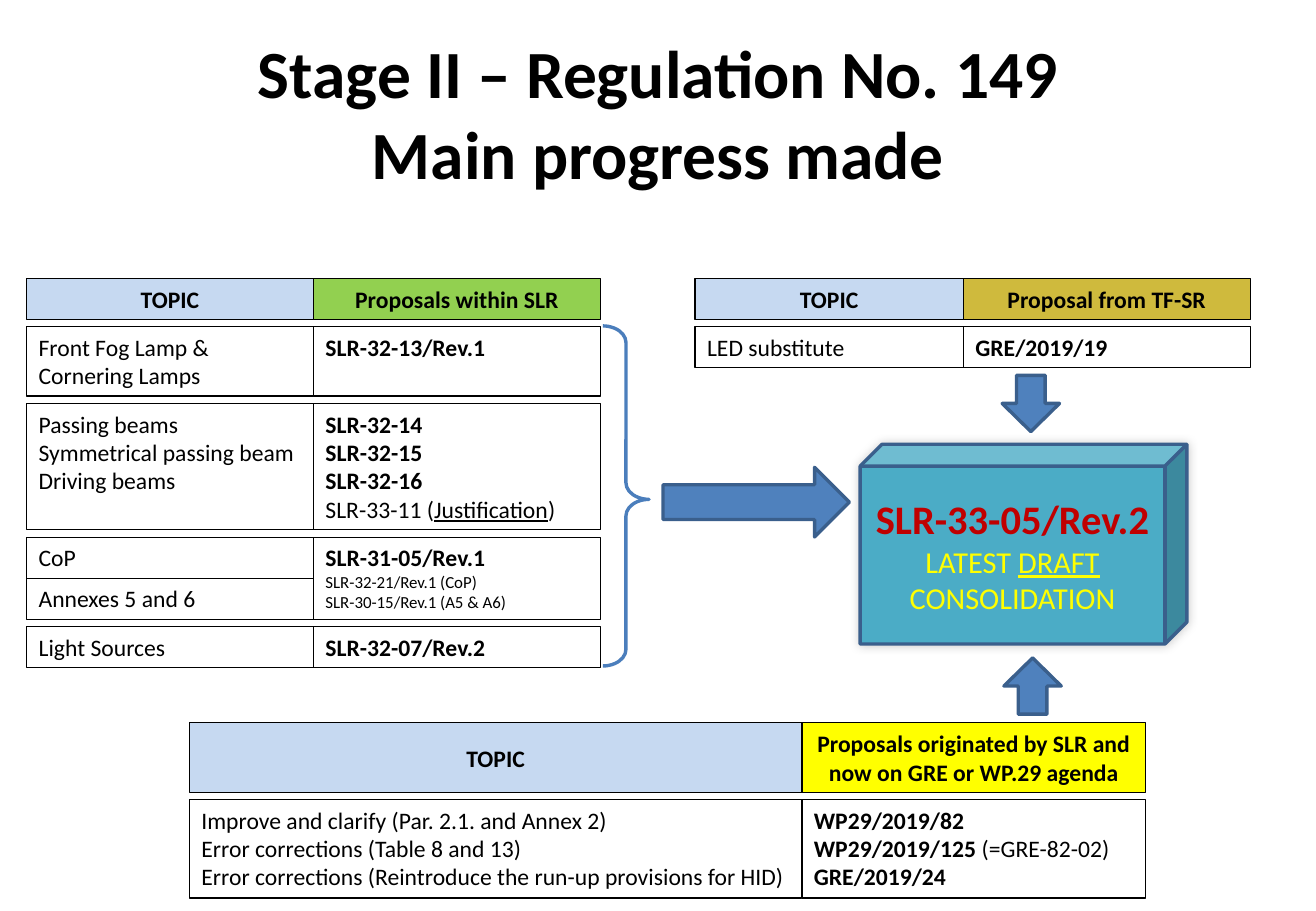
"""Build the slide on the main progress of Regulation No. 149, Stage II."""
from dataclasses import dataclass

from lxml import etree
from pptx import Presentation
from pptx.dml.color import RGBColor
from pptx.enum import shapes, text
from pptx.oxml import ns
from pptx.util import Pt

FONT = "Calibri"
BLACK = RGBColor(0x00, 0x00, 0x00)
PALE_BLUE = RGBColor(0xC6, 0xD9, 0xF1)
GREEN = RGBColor(0x92, 0xD0, 0x50)
GOLD = RGBColor(0xCF, 0xBA, 0x3D)
YELLOW = RGBColor(0xFF, 0xFF, 0x00)
TEAL = RGBColor(0x4B, 0xAC, 0xC6)
BLUE = RGBColor(0x4F, 0x81, 0xBD)
DARK_BLUE = RGBColor(0x3A, 0x5F, 0x8C)
BRACE_BLUE = RGBColor(0x4B, 0x7E, 0xBC)
RED = RGBColor(0xC0, 0x00, 0x00)

ROW_GAP = 4.4
LINE_1, LINES_2, LINES_3, LINES_4 = 24.3, 41.1, 58.3, 74.9
SHAPE = shapes.MSO_SHAPE
TOP, MIDDLE = text.MSO_ANCHOR.TOP, text.MSO_ANCHOR.MIDDLE
LEFT, CENTER = text.PP_ALIGN.LEFT, text.PP_ALIGN.CENTER


@dataclass
class Span:
    words: str
    size: float = 14
    bold: bool = False
    underline: bool = False
    color: RGBColor = BLACK


def plain(*lines):
    return [[Span(line)] for line in lines]


def bold(*lines):
    return [[Span(line, bold=True)] for line in lines]


def write(shape, paragraphs, align=LEFT, anchor=TOP):
    frame = shape.text_frame
    frame.word_wrap = True
    frame.vertical_anchor = anchor
    for index, spans in enumerate(paragraphs):
        para = frame.add_paragraph() if index else frame.paragraphs[0]
        para.alignment = align
        for span in spans:
            run = para.add_run()
            run.text = span.words
            run.font.name = FONT
            run.font.size = Pt(span.size)
            run.font.bold = span.bold
            run.font.underline = span.underline
            run.font.color.rgb = span.color


def add_box(page, kind, box, fill=None, line=BLACK, weight=0.75):
    shape = page.shapes.add_shape(kind, *map(Pt, box))
    shape.shadow.inherit = False
    if fill is None:
        shape.fill.background()
    else:
        shape.fill.solid()
        shape.fill.fore_color.rgb = fill
    shape.line.color.rgb = line
    shape.line.width = Pt(weight)
    return shape


def add_title(page, box):
    title = page.shapes.add_textbox(*map(Pt, box))
    lines = ("Stage II – Regulation No. 149", "Main progress made")
    write(title, [[Span(line, 40, True)] for line in lines], CENTER)


def add_topic_grid(page, left, top, widths, header, rows):
    """Stack a header and rows of (height, topic cells, proposal)."""
    heading, color, height = header
    for x, width, label, fill in (
        (left, widths[0], "TOPIC", PALE_BLUE),
        (left + widths[0], widths[1], heading, color),
    ):
        cell = add_box(page, SHAPE.RECTANGLE, (x, top, width, height), fill)
        write(cell, bold(label), CENTER, MIDDLE)
    top += height + ROW_GAP
    for height, topics, proposal in rows:
        part = height / len(topics)
        for index, topic in enumerate(topics):
            box = (left, top + index * part, widths[0], part)
            write(add_box(page, SHAPE.RECTANGLE, box), topic)
        box = (left + widths[0], top, widths[1], height)
        write(add_box(page, SHAPE.RECTANGLE, box), proposal)
        top += height + ROW_GAP


def add_draft_cube(page, box):
    cube = add_box(page, SHAPE.CUBE, box, TEAL, DARK_BLUE, 2)
    cube.adjustments[0] = 0.11
    effects = cube._element.spPr.find(ns.qn("a:effectLst"))
    shadow = etree.SubElement(
        effects, ns.qn("a:outerShdw"), blurRad=str(Pt(6)), dist="0", dir="18900000"
    )
    tint = etree.SubElement(shadow, ns.qn("a:srgbClr"), val="000000")
    etree.SubElement(tint, ns.qn("a:alpha"), val="20000")
    write(cube, [
        [Span("SLR-33-05/Rev.2", 24, True, color=RED)],
        [
            Span("LATEST ", 18, color=YELLOW),
            Span("DRAFT", 18, underline=True, color=YELLOW),
            Span(" CONSOLIDATION", 18, color=YELLOW),
        ],
    ], CENTER, MIDDLE)


def add_arrow(page, kind, box, rotation=0):
    arrow = add_box(page, kind, box, BLUE, DARK_BLUE, 2)
    arrow.rotation = rotation


def add_brace(page, box):
    brace = add_box(page, SHAPE.RIGHT_BRACE, box, None, BRACE_BLUE, 2)
    brace.adjustments[0] = 0.36
    brace.adjustments[1] = 0.51


def main():
    deck = Presentation()
    deck.slide_width, deck.slide_height = Pt(780), Pt(540)
    page = deck.slides.add_slide(deck.slide_layouts[6])

    add_title(page, (39, 15, 702, 104.4))
    add_topic_grid(page, 15.8, 165, (170, 170), ("Proposals within SLR", GREEN, LINE_1), [
        (LINES_2, [plain("Front Fog Lamp &", "Cornering Lamps")], bold("SLR-32-13/Rev.1")),
        (
            LINES_4,
            [plain("Passing beams", "Symmetrical passing beam", "Driving beams")],
            bold("SLR-32-14", "SLR-32-15", "SLR-32-16")
            + [[Span("SLR-33-11 ("), Span("Justification", underline=True), Span(")")]],
        ),
        (
            2 * LINE_1,
            [plain("CoP"), plain("Annexes 5 and 6")],
            bold("SLR-31-05/Rev.1")
            + [[Span("SLR-32-21/Rev.1 (CoP)", 10)], [Span("SLR-30-15/Rev.1 (A5 & A6)", 10)]],
        ),
        (LINE_1, [plain("Light Sources")], bold("SLR-32-07/Rev.2")),
    ])
    add_topic_grid(page, 412, 165, (159, 170), ("Proposal from TF-SR", GOLD, LINE_1), [
        (LINE_1, [plain("LED substitute")], bold("GRE/2019/19")),
    ])
    agenda = "Proposals originated by SLR and now on GRE or WP.29 agenda"
    add_topic_grid(page, 112.3, 428.5, (363, 203.8), (agenda, YELLOW, LINES_2), [
        (
            LINES_3,
            [plain(
                "Improve and clarify (Par. 2.1. and Annex 2)",
                "Error corrections (Table 8 and 13)",
                "Error corrections (Reintroduce the run-up provisions for HID)",
            )],
            [
                [Span("WP29/2019/82", bold=True)],
                [Span("WP29/2019/125 ", bold=True), Span("(=GRE-82-02)")],
                [Span("GRE/2019/24", bold=True)],
            ],
        ),
    ])
    add_draft_cube(page, (509.8, 263.3, 193.7, 118.4))
    add_arrow(page, SHAPE.RIGHT_ARROW, (393, 277, 110.5, 41.3))
    add_arrow(page, SHAPE.DOWN_ARROW, (594, 222.5, 34, 33.3))
    add_arrow(page, SHAPE.DOWN_ARROW, (595, 390, 34, 33.3), 180)
    add_brace(page, (357.3, 193.2, 27.4, 201.6))
    deck.save("out.pptx")


if __name__ == "__main__":
    main()
